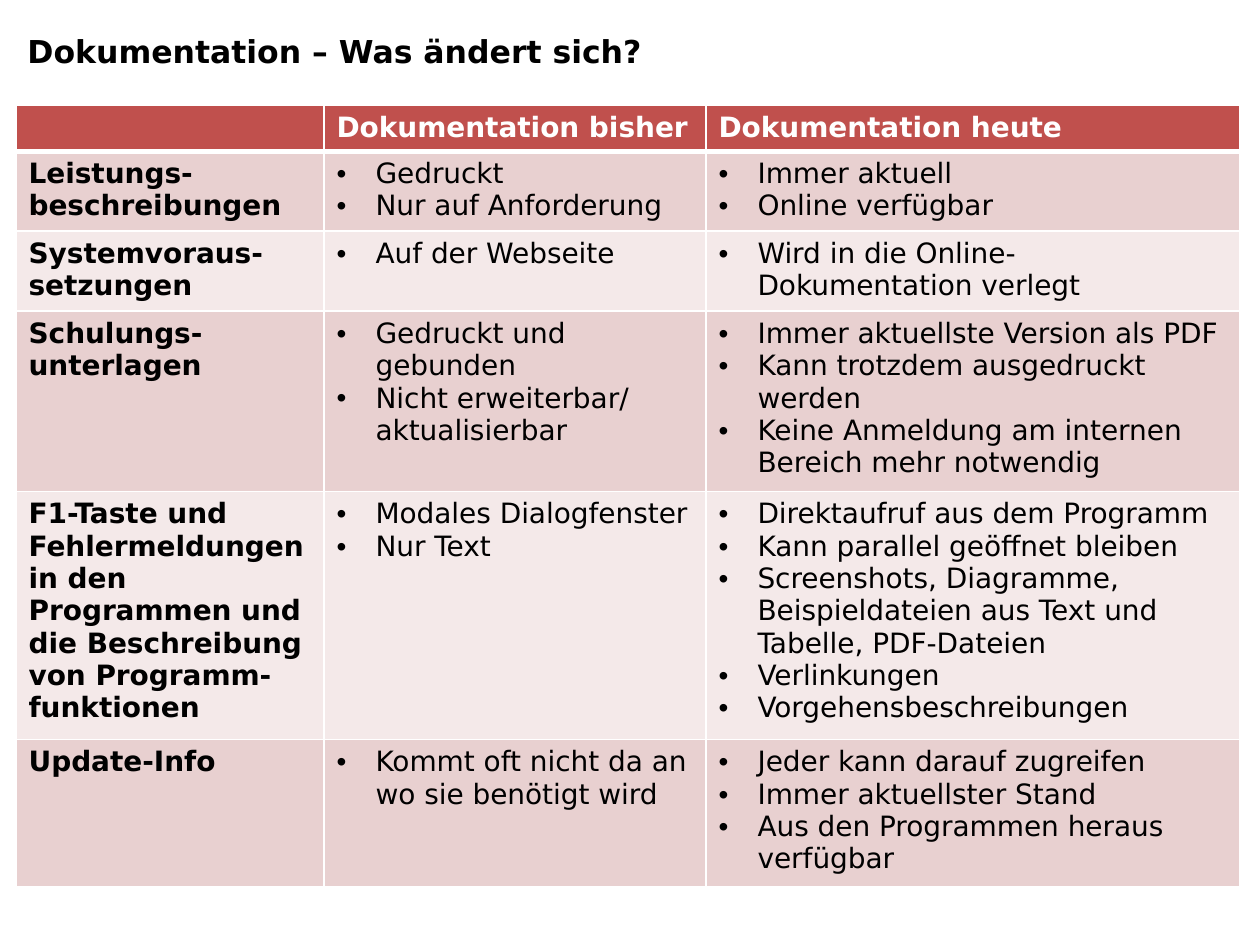
from lxml.etree import SubElement
from pptx import Presentation
from pptx.dml.color import RGBColor
from pptx.oxml.ns import qn
from pptx.util import Emu, Pt

PX = 914400 // 126
FONT = "DejaVu Sans"
WHITE, BLACK, RED = "FFFFFF", "000000", "C0504D"
BANDS = ["E8D0D0", "F4E9E9"]
TITLE = "Dokumentation – Was ändert sich?"
HEAD = ["", "Dokumentation bisher", "Dokumentation heute"]
ROWS = [
    ("Leistungs-beschreibungen",
     ["Gedruckt", "Nur auf Anforderung"],
     ["Immer aktuell", "Online verfügbar"]),
    ("Systemvoraus-setzungen",
     ["Auf der Webseite"],
     ["Wird in die Online-Dokumentation verlegt"]),
    ("Schulungs-unterlagen",
     ["Gedruckt und gebunden", "Nicht erweiterbar/ aktualisierbar"],
     ["Immer aktuellste Version als PDF",
      "Kann trotzdem ausgedruckt werden",
      "Keine Anmeldung am internen Bereich mehr notwendig"]),
    ("F1-Taste und Fehlermeldungen in den Programmen und "
     "die Beschreibung von Programm- funktionen",
     ["Modales Dialogfenster", "Nur Text"],
     ["Direktaufruf aus dem Programm",
      "Kann parallel geöffnet bleiben",
      "Screenshots, Diagramme, Beispieldateien aus Text und Tabelle, PDF-Dateien",
      "Verlinkungen",
      "Vorgehensbeschreibungen"]),
    ("Update-Info",
     ["Kommt oft nicht da an wo sie benötigt wird"],
     ["Jeder kann darauf zugreifen",
      "Immer aktuellster Stand",
      "Aus den Programmen heraus verfügbar"]),
]
WIDTHS = [308, 382, 534]
HEIGHTS = [45, 80, 80, 180, 248, 147]


def px(n):
    return Emu(n * PX)


def tint(code):
    return RGBColor.from_string(code)


def style(para, size, color, bold):
    font = para.font
    font.name, font.size, font.bold = FONT, Pt(size), bold
    font.color.rgb = tint(color)


def bullet(para):
    props = para._p.get_or_add_pPr()
    props.set("marL", str(px(39)))
    props.set("indent", str(px(-39)))
    SubElement(props, qn("a:buFont"), typeface="Arial")
    SubElement(props, qn("a:buChar"), char="•")


def border(cell, top, base):
    props = cell._tc.get_or_add_tcPr()
    for side, width in zip("LRTB", (1, 1, top, base)):
        line = SubElement(props, qn(f"a:ln{side}"), w=str(Pt(width)))
        fill = SubElement(line, qn("a:solidFill"))
        SubElement(fill, qn("a:srgbClr"), val=WHITE)


def fill_cell(cell, items, back, color, bold, listed):
    cell.fill.solid()
    cell.fill.fore_color.rgb = tint(back)
    frame = cell.text_frame
    for i, text in enumerate(items):
        para = frame.add_paragraph() if i else frame.paragraphs[0]
        para.text = text
        if listed:
            bullet(para)
        style(para, 16, color, bold)


def add_title(slide):
    box = slide.shapes.add_textbox(px(15), px(26), px(917), px(50))
    frame = box.text_frame
    frame.word_wrap = True
    para = frame.paragraphs[0]
    para.text = TITLE
    style(para, 18, BLACK, True)


def add_grid(slide):
    grid = slide.shapes.add_table(
        len(HEIGHTS), len(WIDTHS), px(16), px(105),
        px(sum(WIDTHS)), px(sum(HEIGHTS))).table
    grid.first_row = grid.horz_banding = False
    for col, width in zip(grid.columns, WIDTHS):
        col.width = px(width)
    for row, height in zip(grid.rows, HEIGHTS):
        row.height = px(height)
    for r, texts in enumerate([HEAD] + ROWS):
        back = BANDS[(r - 1) % 2] if r else RED
        color = BLACK if r else WHITE
        for c, text in enumerate(texts):
            cell = grid.cell(r, c)
            border(cell, 3 if r == 1 else 1, 1 if r else 3)
            listed = isinstance(text, list)
            items = text if listed else [text]
            fill_cell(cell, items, back, color, not listed, listed)


def main():
    """Build the slide comparing old and new documentation."""
    deck = Presentation()
    deck.slide_width, deck.slide_height = px(1260), px(945)
    slide = deck.slides.add_slide(deck.slide_layouts[6])
    add_title(slide)
    add_grid(slide)
    deck.save("out.pptx")


if __name__ == "__main__":
    main()
